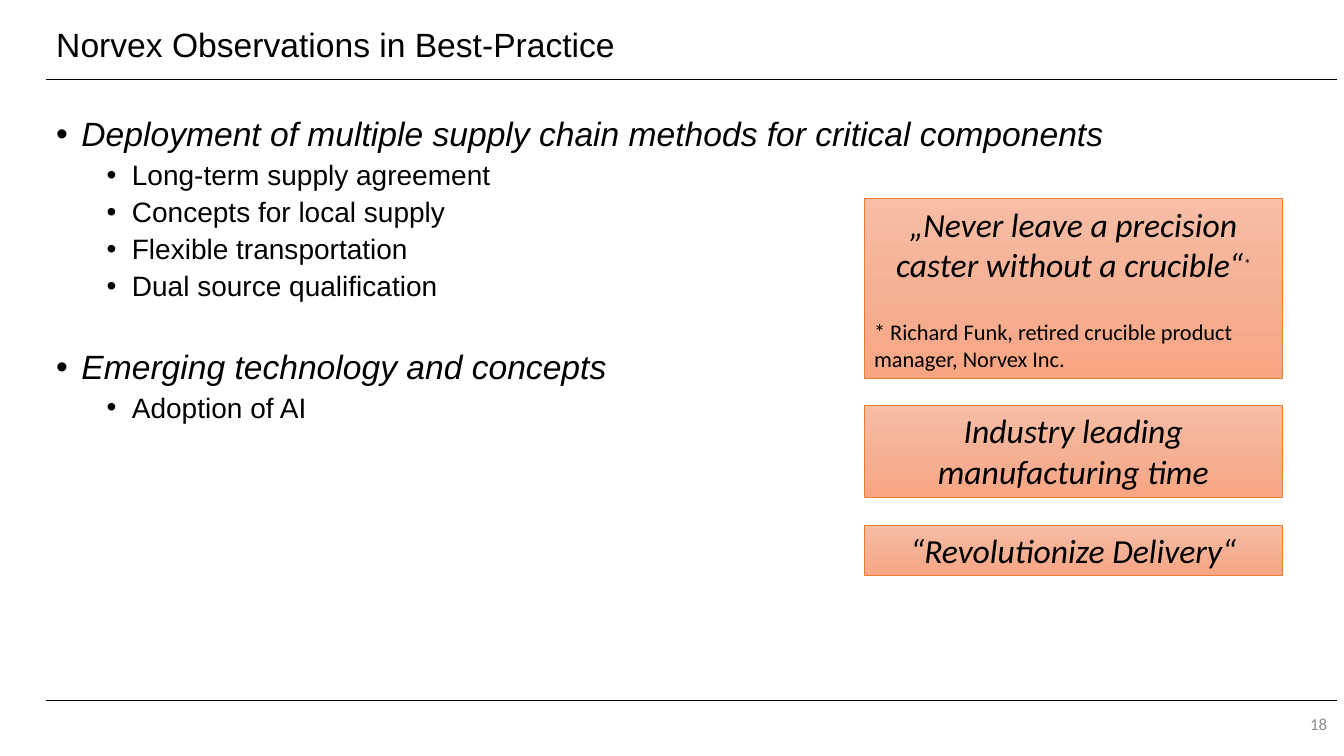
from copy import deepcopy

from pptx import Presentation
from pptx.dml.color import RGBColor
from pptx.enum import shapes, text
from pptx.oxml.ns import qn
from pptx.util import Inches, Pt
from lxml import etree

# Content
TITLE = "Norvex Observations in Best-Practice"
PAGE = "18"
TOPICS = [
    ("Deployment of multiple supply chain methods for critical components",
     ["Long-term supply agreement", "Concepts for local supply",
      "Flexible transportation", "Dual source qualification"]),
    ("Emerging technology and concepts", ["Adoption of AI"]),
]
# Quote, footnote, top, height
QUOTES = [
    ("„Never leave a precision caster without a crucible“",
     "* Richard Funk, retired crucible product manager, Norvex Inc.", 1.97, 1.78),
    ("Industry leading manufacturing time", None, 4.02, 0.91),
    ("“Revolutionize Delivery“", None, 5.21, 0.5),
]

# Style and layout
COLORS = {"text": "000000", "page": "8C8C8C", "border": "ED7D31"}
QUOTE_GRADIENT = [(0, "F7BDA5"), (0.5, "F5B196"), (1, "F8A582")]
LEFT, WIDTH = 0.46, 12.8
RULE_TOPS = (0.79, 6.95)
QUOTE_LEFT, QUOTE_WIDTH = 8.57, 4.15
TOPIC_GAP = 34


def color(name):
    return RGBColor.from_string(COLORS[name])


def add_run(paragraph, words, size, font="Arial", italic=False, tint="text"):
    run = paragraph.add_run()
    run.text = words
    run.font.size = Pt(size)
    run.font.name = font
    run.font.italic = italic
    run.font.color.rgb = color(tint)
    return run


def add_box(left, top, width, height, anchor):
    box = slide.shapes.add_textbox(*map(Inches, (left, top, width, height)))
    frame = box.text_frame
    frame.word_wrap = True
    frame.vertical_anchor = anchor
    return frame


def add_bullet(paragraph, indent, before):
    props = paragraph._p.get_or_add_pPr()
    props.set("marL", str(Inches(indent)))
    props.set("indent", str(Inches(-0.25)))
    etree.SubElement(props, qn("a:buFont")).set("typeface", "Arial")
    etree.SubElement(props, qn("a:buChar")).set("char", "•")
    paragraph.line_spacing = 0.9
    paragraph.space_before = Pt(before)


def fill_gradient(shape):
    shape.fill.gradient()
    shape.fill.gradient_angle = 270
    stop_list = shape._element.spPr.find(".//" + qn("a:gsLst"))
    stop_list.insert(1, deepcopy(stop_list[0]))
    for stop, (position, tone) in zip(shape.fill.gradient_stops, QUOTE_GRADIENT):
        stop.position = position
        stop.color.rgb = RGBColor.from_string(tone)


prs = Presentation()
prs.slide_width, prs.slide_height = Inches(13.33), Inches(7.5)
slide = prs.slides.add_slide(prs.slide_layouts[6])

# Rules above and below the content
for top in RULE_TOPS:
    rule = slide.shapes.add_connector(
        shapes.MSO_CONNECTOR.STRAIGHT,
        Inches(LEFT), Inches(top), Inches(LEFT + WIDTH), Inches(top))
    rule.line.color.rgb = color("text")
    rule.line.width = Pt(0.5)
    etree.SubElement(rule._element.spPr, qn("a:effectLst"))

# Title
heading = add_box(LEFT, 0.19, 10.03, 0.54, text.MSO_ANCHOR.MIDDLE).paragraphs[0]
heading.line_spacing = 0.9
add_run(heading, TITLE, 24)

# Topics with their points
body = add_box(LEFT, 1.12, WIDTH, 5.64, text.MSO_ANCHOR.TOP)
for number, (topic, points) in enumerate(TOPICS):
    topic_line = body.add_paragraph() if number else body.paragraphs[0]
    add_bullet(topic_line, 0.25, TOPIC_GAP if number else 0)
    add_run(topic_line, topic, 24, italic=True)
    for point in points:
        point_line = body.add_paragraph()
        add_bullet(point_line, 0.75, 5)
        add_run(point_line, point, 20)

# Quotes
for quote, footnote, top, height in QUOTES:
    card = slide.shapes.add_shape(
        shapes.MSO_SHAPE.RECTANGLE,
        *map(Inches, (QUOTE_LEFT, top, QUOTE_WIDTH, height)))
    card.shadow.inherit = False
    fill_gradient(card)
    card.line.color.rgb = color("border")
    card.line.width = Pt(0.5)
    frame = card.text_frame
    frame.word_wrap = True
    frame.vertical_anchor = text.MSO_ANCHOR.TOP
    quote_line = frame.paragraphs[0]
    quote_line.alignment = text.PP_ALIGN.CENTER
    add_run(quote_line, quote, 24, "Calibri", italic=True)
    if footnote:
        mark = add_run(quote_line, "*", 18, "Calibri", italic=True)
        mark._r.get_or_add_rPr().set("baseline", "30000")
        note_line = frame.add_paragraph()
        note_line.alignment = text.PP_ALIGN.LEFT
        note_line.space_before = Pt(24)
        add_run(note_line, footnote, 16, "Calibri")

# Page number
page_line = add_box(9.42, 7.02, 3.84, 0.33, text.MSO_ANCHOR.MIDDLE).paragraphs[0]
page_line.alignment = text.PP_ALIGN.RIGHT
add_run(page_line, PAGE, 12, "Calibri", tint="page")

prs.save("out.pptx")
